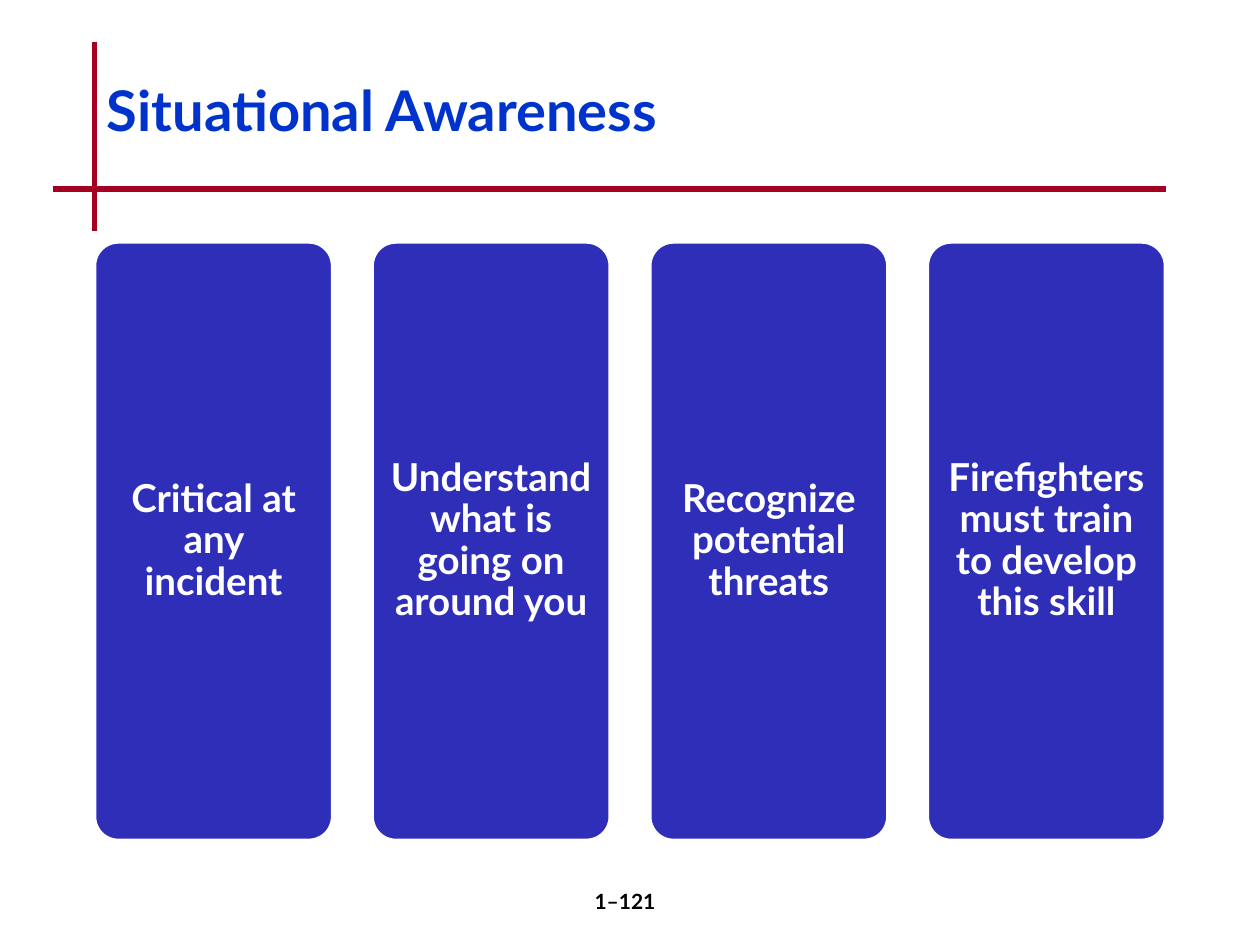
from dataclasses import dataclass

import pptx
import pptx.dml.color
import pptx.enum.shapes
import pptx.enum.text
import pptx.oxml.ns
import pptx.shapes.base
import pptx.slide
import pptx.util
from lxml import etree
from pptx.dml.color import RGBColor
from pptx.enum.text import MSO_ANCHOR, PP_ALIGN
from pptx.util import Inches

RED = RGBColor(0xA5, 0x00, 0x21)
TITLE_BLUE = RGBColor(0x00, 0x33, 0xCC)
PANEL_BLUE = RGBColor(0x2E, 0x2E, 0xB9)
WHITE = RGBColor(0xFF, 0xFF, 0xFF)
BLACK = RGBColor(0x00, 0x00, 0x00)
FONT = "Lato"

PANEL_TEXTS = [
    "Critical at any incident",
    "Understand what is going on around you",
    "Recognize potential threats",
    "Firefighters must train to develop this skill",
]
CONTENT_LEFT, CONTENT_RIGHT = 0.75, 9.25
PANEL_WIDTH = 1.89
PANEL_PITCH = (CONTENT_RIGHT - CONTENT_LEFT - PANEL_WIDTH) / (len(PANEL_TEXTS) - 1)


@dataclass(frozen=True)
class Box:
    """A rectangle in inches."""

    left: float
    top: float
    width: float
    height: float

    def lengths(self) -> list[pptx.util.Length]:
        return [Inches(value) for value in (self.left, self.top, self.width, self.height)]


@dataclass(frozen=True)
class Rule:
    """A straight line between two points in inches."""

    x1: float
    y1: float
    x2: float
    y2: float


RULES = [Rule(0.75, 0.33, 0.75, 1.83), Rule(0.42, 1.5, 9.25, 1.5)]


def write_text(
    shape: pptx.shapes.base.BaseShape,
    text: str,
    *,
    size: float,
    color: RGBColor,
    align: PP_ALIGN = PP_ALIGN.CENTER,
    anchor: MSO_ANCHOR = MSO_ANCHOR.MIDDLE,
    line_spacing: float = 1.0,
    margins: tuple[float, float] = (0.1, 0.05),
) -> None:
    """Fill a shape with one bold paragraph; margins are horizontal, vertical."""
    frame = shape.text_frame
    frame.word_wrap = True
    frame.vertical_anchor = anchor
    frame.margin_left = frame.margin_right = Inches(margins[0])
    frame.margin_top = frame.margin_bottom = Inches(margins[1])
    paragraph = frame.paragraphs[0]
    paragraph.alignment = align
    paragraph.line_spacing = line_spacing
    run = paragraph.add_run()
    run.text = text
    run.font.name = FONT
    run.font.size = pptx.util.Pt(size)
    run.font.bold = True
    run.font.color.rgb = color


def draw_rule(slide: pptx.slide.Slide, rule: Rule) -> None:
    connector = slide.shapes.add_connector(
        pptx.enum.shapes.MSO_CONNECTOR.STRAIGHT,
        Inches(rule.x1), Inches(rule.y1), Inches(rule.x2), Inches(rule.y2),
    )
    connector.line.color.rgb = RED
    connector.line.width = pptx.util.Pt(3)
    etree.SubElement(connector._element.spPr, pptx.oxml.ns.qn("a:effectLst"))


def draw_panel(slide: pptx.slide.Slide, box: Box, text: str) -> None:
    panel = slide.shapes.add_shape(
        pptx.enum.shapes.MSO_SHAPE.ROUNDED_RECTANGLE, *box.lengths()
    )
    panel.adjustments[0] = 0.1
    panel.shadow.inherit = False
    panel.fill.solid()
    panel.fill.fore_color.rgb = PANEL_BLUE
    panel.line.color.rgb = WHITE
    panel.line.width = pptx.util.Pt(2)
    write_text(panel, text, size=22, color=WHITE, line_spacing=0.9, margins=(0.09, 0.09))


def main() -> None:
    presentation = pptx.Presentation()
    presentation.slide_width = Inches(10)
    presentation.slide_height = Inches(7.5)
    slide = presentation.slides.add_slide(presentation.slide_layouts[6])

    for rule in RULES:
        draw_rule(slide, rule)

    title = slide.shapes.add_textbox(*Box(0.75, 0.33, 8.5, 1.17).lengths())
    write_text(title, "Situational Awareness", size=32, color=TITLE_BLUE,
               align=PP_ALIGN.LEFT, line_spacing=0.8)

    for index, text in enumerate(PANEL_TEXTS):
        left = CONTENT_LEFT + index * PANEL_PITCH
        draw_panel(slide, Box(left, 1.92, PANEL_WIDTH, 4.75), text)

    page_number = slide.shapes.add_textbox(*Box(3.92, 7, 2.08, 0.5).lengths())
    write_text(page_number, "1–121", size=12, color=BLACK, anchor=MSO_ANCHOR.TOP)

    presentation.save("out.pptx")


if __name__ == "__main__":
    main()
